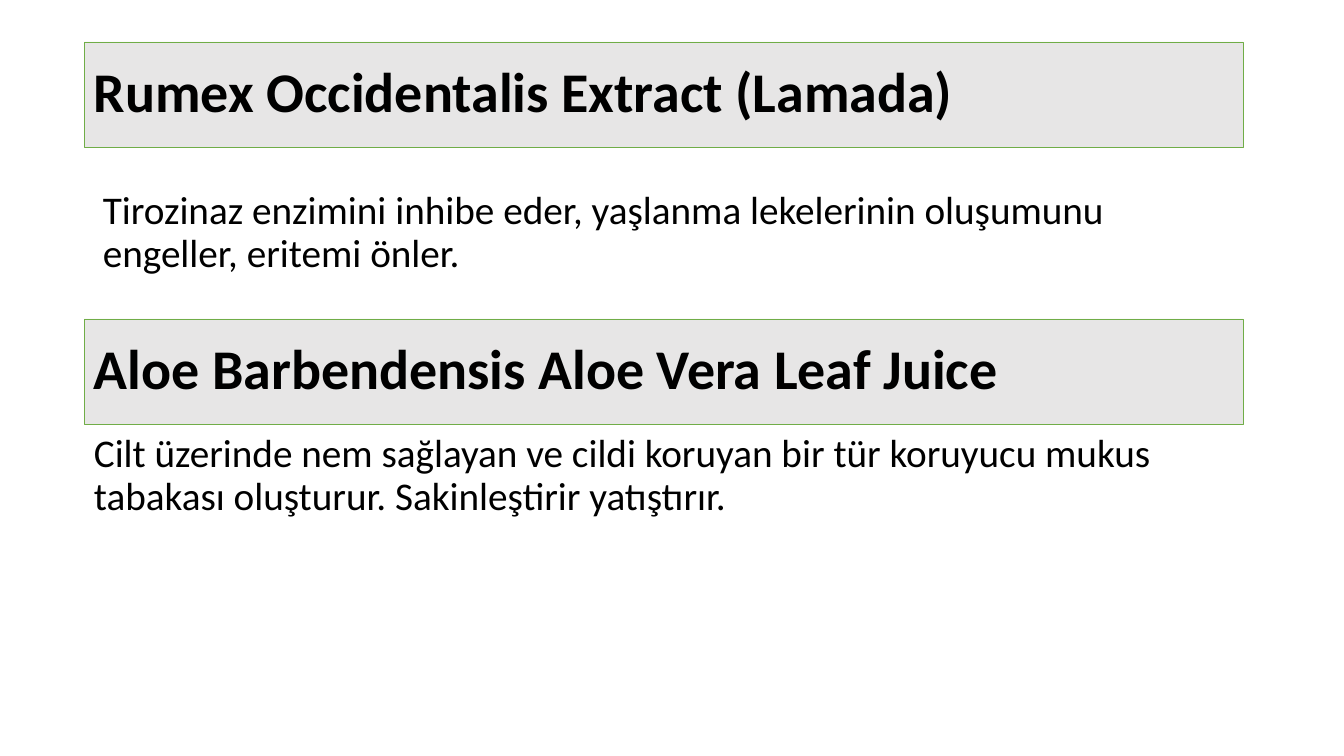
from pptx import Presentation
from pptx.dml.color import RGBColor
from pptx.enum.shapes import MSO_SHAPE as Shape
from pptx.enum.text import MSO_ANCHOR as Anchor, PP_ALIGN as Align
from pptx.util import Pt

BLACK = RGBColor(0x00, 0x00, 0x00)
GREY = RGBColor(0xE7, 0xE6, 0xE6)
GREEN = RGBColor(0x70, 0xAD, 0x47)

# heading, its top, body text, its left and top
HERBS = [
    ("Rumex Occidentalis Extract (Lamada)", 42,
     "Tirozinaz enzimini inhibe eder, yaşlanma lekelerinin oluşumunu "
     "engeller, eritemi önler.", 93, 186),
    ("Aloe Barbendensis Aloe Vera Leaf Juice", 319,
     "Cilt üzerinde nem sağlayan ve cildi koruyan bir tür koruyucu mukus "
     "tabakası oluşturur. Sakinleştirir yatıştırır.", 84, 429),
]
LEFT, WIDTH = 84, 1159
HEAD_H, BODY_H = 105, 133
HEAD = {"size": Pt(40), "bold": True}
BODY = {"size": Pt(28), "bold": False}
FONT = {"name": "Calibri"}
PARA = {"line_spacing": 0.9, "alignment": Align.LEFT}


def px(n):
    return round(n * 914400 / 100.8)


def assign(item, values):
    for key, value in values.items():
        setattr(item, key, value)


def write(shape, text, font, anchor, before):
    frame = shape.text_frame
    assign(frame, {"word_wrap": True, "vertical_anchor": anchor})
    para = frame.paragraphs[0]
    assign(para, PARA | {"space_before": before})
    run = para.add_run()
    run.text = text
    assign(run.font, FONT | font)
    run.font.color.rgb = BLACK


def add_head(slide, text, top):
    bar = slide.shapes.add_shape(
        Shape.RECTANGLE, px(LEFT), px(top), px(WIDTH), px(HEAD_H))
    bar.shadow.inherit = False
    bar.fill.solid()
    bar.fill.fore_color.rgb = GREY
    bar.line.color.rgb = GREEN
    bar.line.width = Pt(0.5)
    write(bar, text, HEAD, Anchor.MIDDLE, Pt(0))


def add_body(slide, text, left, top):
    box = slide.shapes.add_textbox(px(left), px(top), px(WIDTH), px(BODY_H))
    write(box, text, BODY, Anchor.TOP, Pt(10))


def main():
    deck = Presentation()
    assign(deck, {"slide_width": px(1344), "slide_height": px(756)})
    slide = deck.slides.add_slide(deck.slide_layouts[6])
    for head, head_top, body, left, top in HERBS:
        add_body(slide, body, left, top)
        add_head(slide, head, head_top)
    deck.save("out.pptx")


if __name__ == "__main__":
    main()
